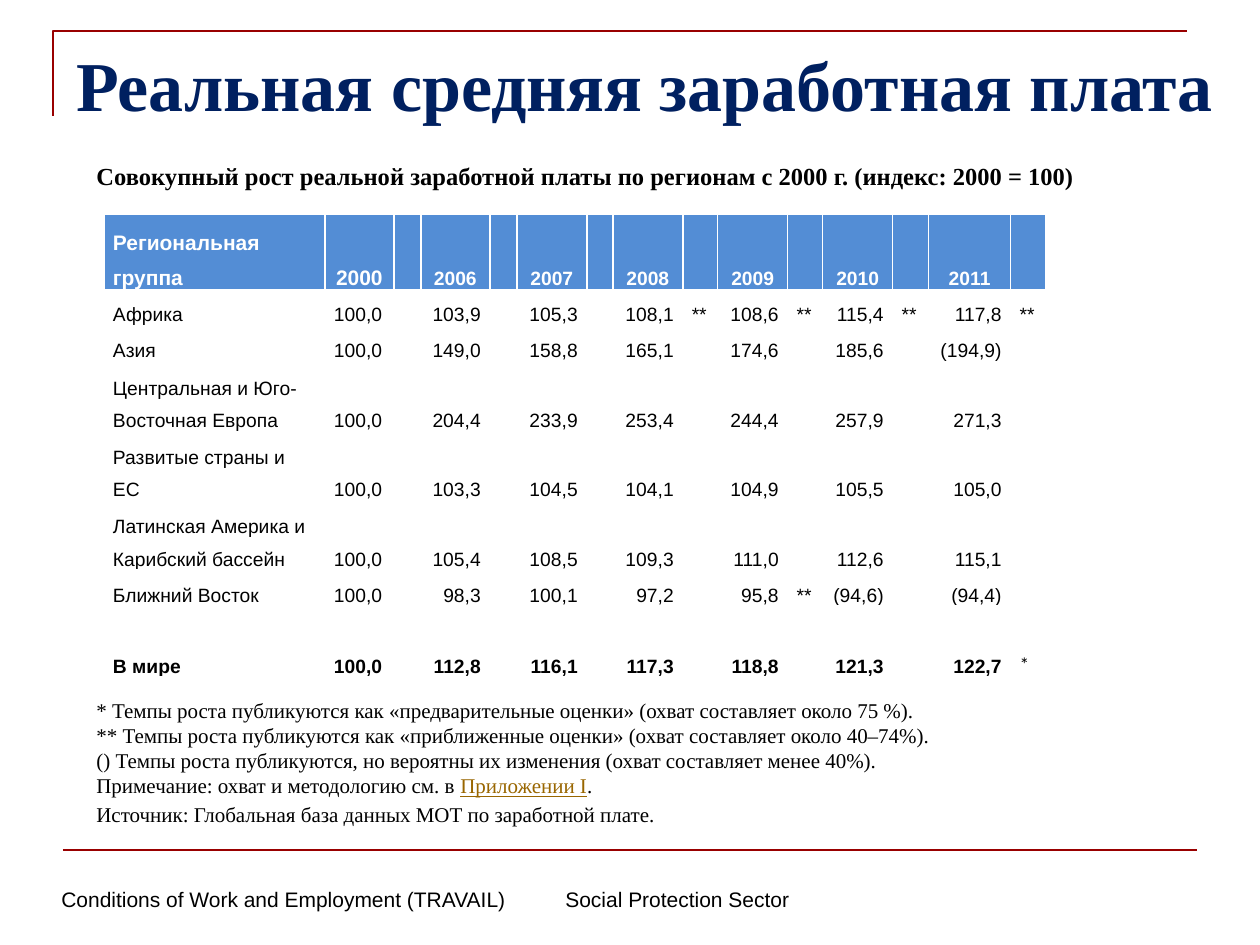
from lxml import etree
from pptx import Presentation
from pptx import util as u
from pptx.dml.color import RGBColor
from pptx.enum import shapes, text
from pptx.oxml.ns import qn

PX = 914400 // 126  # EMU per px
COLORS = {"rule": "990000", "title": "002060", "ink": "000000",
          "header": "538DD5", "white": "FFFFFF", "link": "996600"}
SERIF, SANS = "Times New Roman", "Arial"
LEFT, CENTER, RIGHT = (text.PP_ALIGN.LEFT, text.PP_ALIGN.CENTER,
                       text.PP_ALIGN.RIGHT)

COLUMN_WIDTHS = [221, 69, 27, 69, 27, 70, 26, 70, 35, 70, 35, 70, 36, 82, 35]
ROW_HEIGHTS = [76, 36, 36, 69, 69, 69, 36, 35, 36]
YEARS = ["2000", "2006", "2007", "2008", "2009", "2010", "2011"]
# Region, yearly index values, and marks by year
REGIONS = [
    ("Африка", "100,0 103,9 105,3 108,1 108,6 115,4 117,8",
     {"2008": "**", "2009": "**", "2010": "**", "2011": "**"}),
    ("Азия", "100,0 149,0 158,8 165,1 174,6 185,6 (194,9)", {}),
    ("Центральная и Юго-Восточная Европа",
     "100,0 204,4 233,9 253,4 244,4 257,9 271,3", {}),
    ("Развитые страны и ЕС",
     "100,0 103,3 104,5 104,1 104,9 105,5 105,0", {}),
    ("Латинская Америка и Карибский бассейн",
     "100,0 105,4 108,5 109,3 111,0 112,6 115,1", {}),
    ("Ближний Восток", "100,0 98,3 100,1 97,2 95,8 (94,6) (94,4)",
     {"2009": "**"}),
    ("", "", {}),
    ("В мире", "100,0 112,8 116,1 117,3 118,8 121,3 122,7", {"2011": "*"}),
]
NOTES = [
    ["* Темпы роста публикуются как «предварительные оценки» "
     "(охват составляет около 75 %)."],
    ["** Темпы роста публикуются как «приближенные оценки» "
     "(охват составляет около 40–74%)."],
    ["() Темпы роста публикуются, но вероятны их изменения "
     "(охват составляет менее 40%)."],
    ["Примечание: охват и методологию см. в ", "Приложении I", "."],
    ["Источник: Глобальная база данных МОТ по заработной плате."],
]


def px(value):
    return u.Emu(value * PX)


def rgb(name):
    return RGBColor.from_string(COLORS[name])


def add_span(para, words, size=12, font=SANS, color="ink", bold=False,
             underline=False):
    span = para.add_run()
    span.text = words
    span.font.size = u.Pt(size)
    span.font.name = font
    span.font.bold = bold
    span.font.underline = underline
    span.font.color.rgb = rgb(color)


def add_text(page, left, top, width, height, words, align=LEFT, **style):
    box = page.shapes.add_textbox(px(left), px(top), px(width), px(height))
    box.text_frame.word_wrap = True
    para = box.text_frame.paragraphs[0]
    para.alignment = align
    if words:
        add_span(para, words, **style)
    return box


def add_frame(page):
    # Corner rule above the title
    builder = page.shapes.build_freeform(px(53), px(116), scale=1.0)
    builder.add_line_segments([(px(53), px(31)), (px(1187), px(31))],
                              close=False)
    corner = builder.convert_to_shape()
    corner.shadow.inherit = False
    corner.fill.background()
    # Rule above the footer
    rule = page.shapes.add_connector(shapes.MSO_CONNECTOR.STRAIGHT,
                                     px(63), px(850), px(1197), px(850))
    etree.SubElement(rule._element.spPr, qn("a:effectLst"))
    for item in (corner, rule):
        item.line.color.rgb = rgb("rule")
        item.line.width = u.Pt(1.5)


def add_footer(page):
    box = add_text(page, 13, 880, 1260, 38,
                   "Conditions of Work and Employment (TRAVAIL) \t"
                   "Social Protection Sector")
    props = box.text_frame.paragraphs[0]._p.get_or_add_pPr()
    props.set("marL", str(px(36)))
    props.set("indent", "0")
    stops = etree.SubElement(props, qn("a:tabLst"))
    etree.SubElement(stops, qn("a:tab"), pos=str(px(1173)), algn="r")


def fill_cell(cell, words, align=LEFT, fill=None, size=11, **style):
    cell.margin_left = cell.margin_right = px(9)
    cell.margin_top = cell.margin_bottom = 0
    cell.vertical_anchor = text.MSO_ANCHOR.BOTTOM
    if fill:
        cell.fill.solid()
        cell.fill.fore_color.rgb = rgb(fill)
    else:
        cell.fill.background()
    para = cell.text_frame.paragraphs[0]
    para.alignment = align
    para.line_spacing = 1.5
    if words:
        add_span(para, words, size=size, **style)
    else:
        para.font.size = u.Pt(size)


def add_wage_table(page):
    frame = page.shapes.add_table(len(ROW_HEIGHTS), len(COLUMN_WIDTHS),
                                  px(104), px(214), px(sum(COLUMN_WIDTHS)),
                                  px(sum(ROW_HEIGHTS)))
    table = frame.table
    table.horz_banding = False
    for column, width in zip(table.columns, COLUMN_WIDTHS):
        column.width = px(width)
    for row, height in zip(table.rows, ROW_HEIGHTS):
        row.height = px(height)

    # Header: each year is followed by a narrow column for marks
    header = dict(fill="header", color="white", bold=True)
    fill_cell(table.cell(0, 0), "Региональная группа", size=12, **header)
    for i, year in enumerate(YEARS):
        fill_cell(table.cell(0, 2 * i + 1), year, CENTER,
                  size=11 if i else 12, **header)
        fill_cell(table.cell(0, 2 * i + 2), "", **header)

    # Regions
    for r, (region, values, marks) in enumerate(REGIONS, 1):
        bold = region == "В мире"
        fill_cell(table.cell(r, 0), region, bold=bold)
        values = values.split() or [""] * len(YEARS)
        for i, (year, value) in enumerate(zip(YEARS, values)):
            fill_cell(table.cell(r, 2 * i + 1), value,
                      RIGHT if i else LEFT, bold=bold)
            mark = marks.get(year, "")
            fill_cell(table.cell(r, 2 * i + 2), mark,
                      font="Calibri" if mark == "*" else SANS)


def add_notes(page):
    frame = add_text(page, 84, 691, 1155, 144, "").text_frame
    for i, parts in enumerate(NOTES):
        para = frame.add_paragraph() if i else frame.paragraphs[0]
        for words in parts:
            linked = words == "Приложении I"
            add_span(para, words, font=SERIF, underline=linked,
                     color="link" if linked else "ink")
    para.space_before = u.Pt(2)


def main():
    deck = Presentation()
    deck.slide_width, deck.slide_height = px(1260), px(945)
    page = deck.slides.add_slide(deck.slide_layouts[6])
    add_frame(page)
    add_footer(page)
    add_text(page, 44, 35, 1201, 159, "Реальная средняя заработная плата",
             CENTER, size=40, font=SERIF, color="title", bold=True)
    add_text(page, 84, 155, 1155, 43,
             "Совокупный рост реальной заработной платы по регионам "
             "с 2000 г. (индекс: 2000 = 100)",
             size=14, font=SERIF, bold=True)
    add_wage_table(page)
    add_notes(page)
    deck.save("out.pptx")


if __name__ == "__main__":
    main()
